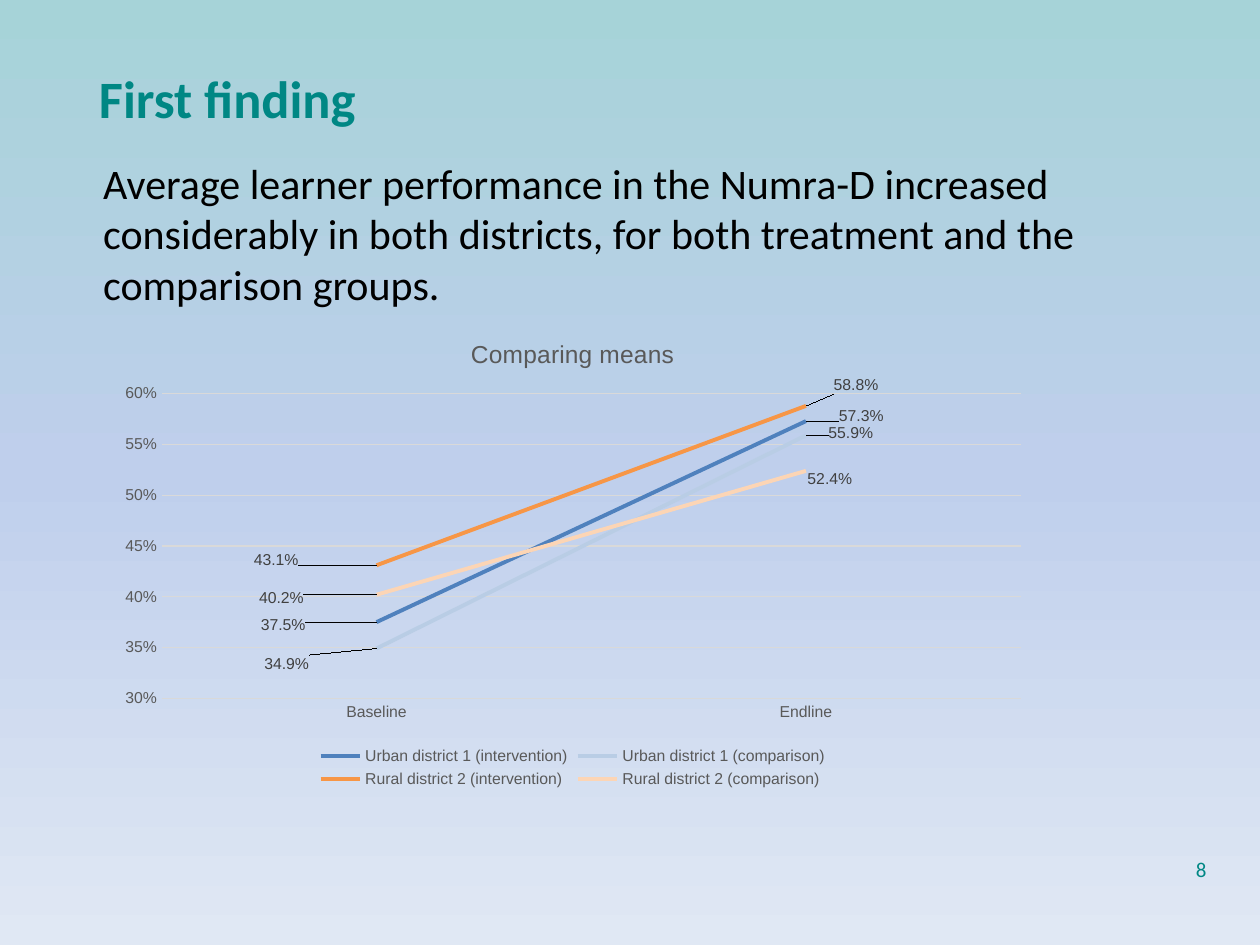
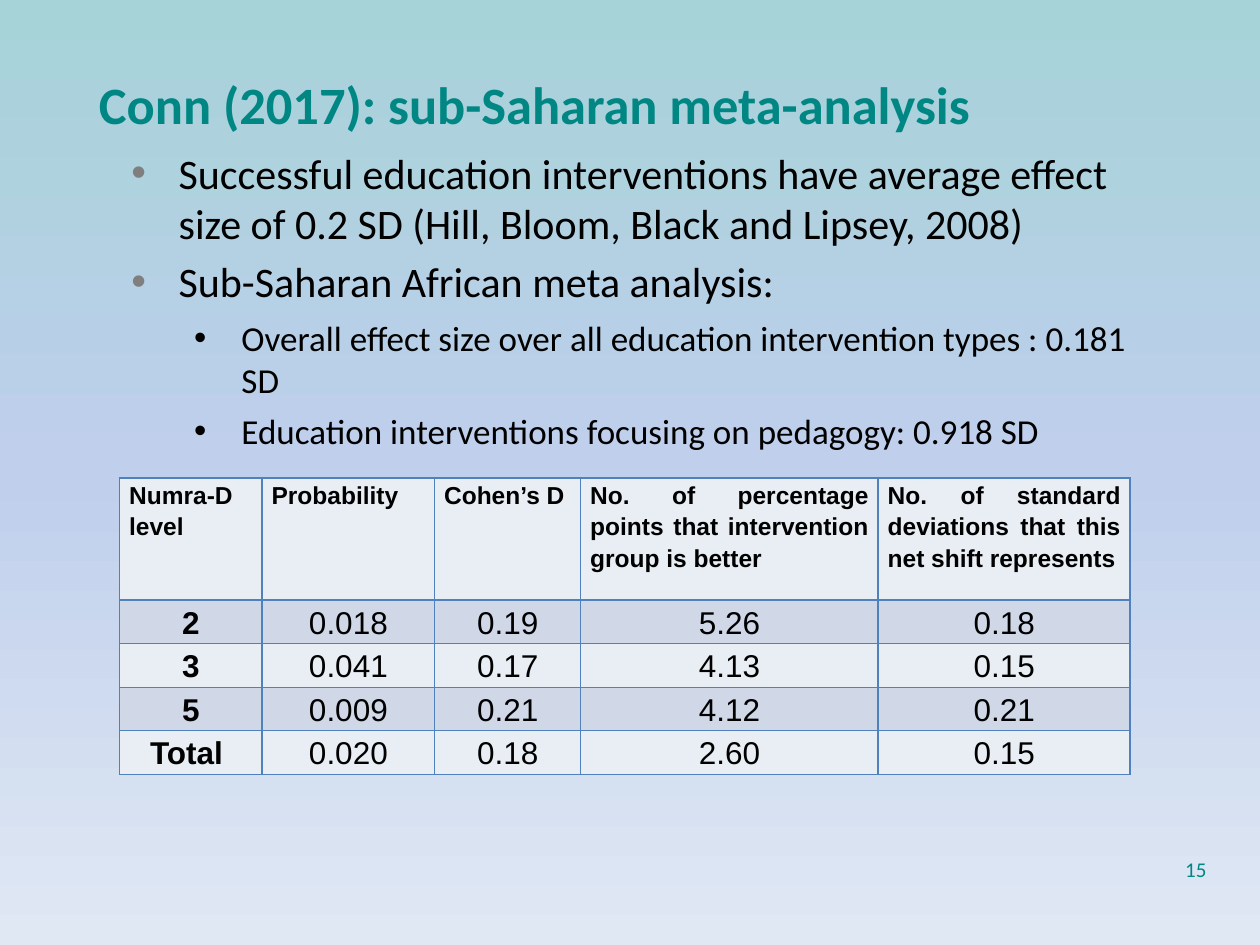
from dataclasses import dataclass

from pptx import Presentation
from pptx.chart.data import CategoryChartData
from pptx.dml.color import RGBColor
from pptx.enum.chart import XL_CHART_TYPE, XL_LABEL_POSITION, XL_LEGEND_POSITION, XL_TICK_MARK
from pptx.enum.text import MSO_ANCHOR, PP_ALIGN
from pptx.oxml import parse_xml
from pptx.oxml.ns import nsdecls, qn
from pptx.util import Pt

LEFT, CENTER, RIGHT, JUSTIFY = PP_ALIGN.LEFT, PP_ALIGN.CENTER, PP_ALIGN.RIGHT, PP_ALIGN.JUSTIFY
TOP, MIDDLE = MSO_ANCHOR.TOP, MSO_ANCHOR.MIDDLE
LINE = XL_CHART_TYPE.LINE
NO_TICKS = XL_TICK_MARK.NONE
LEGEND_BOTTOM = XL_LEGEND_POSITION.BOTTOM
LABEL_RIGHT = XL_LABEL_POSITION.RIGHT


@dataclass(frozen=True)
class Theme:
    # Fonts
    font: str = "Calibri"
    data_font: str = "Arial"
    # Colours
    background: tuple = ((0, "A6D3D8"), (50, "BFCFEC"), (100, "E0E8F4"))
    accent: str = "008784"
    text: str = "000000"
    bullet: str = "7F7F7F"
    axis: str = "595959"
    label: str = "404040"
    grid: str = "D9D9D9"
    border: str = "4F81BD"
    bands: tuple = ("E9EDF4", "D0D8E8")
    # Type sizes
    title: int = 30
    body: int = 24
    sub: int = 20
    cell: int = 18
    head: int = 14
    chart_title: int = 14
    number: int = 12
    chart: int = 9


T = Theme()
SLIDE_W, SLIDE_H = 720, 540

# Boxes: left, top, width, height
TITLE_BOX = (49.5, 34, 648, 44)
NUMBER_BOX = (528.5, 486, 168, 21.6)
FINDING_BOX = (37.5, 86.4, 626.5, 314.5)
CHART_BOX = (60.5, 181.5, 533.5, 272)
BULLETS_BOX = (50.4, 77, 613.5, 376.5)
TABLE_BOX = (68.4, 273, 577.5, 163)

# Name, colour, values, and label shift (right, down) for each point
CHART_SERIES = [
    ("Urban district 1 (intervention)", "4F81BD", (0.375, 0.573), ((-69, 2), (16, -3))),
    ("Urban district 1 (comparison)", "B9CDE5", (0.349, 0.559), ((-67, 9), (10, -1))),
    ("Rural district 2 (intervention)", "F79646", (0.431, 0.588), ((-73, -3), (13, -12))),
    ("Rural district 2 (comparison)", "FCD5B5", (0.402, 0.524), ((-70, 2), (-2, 5))),
]

SUB = dict(size=T.sub, indent=80.5, bullet=T.text, before=5.6)
BULLETS = [
    ("Successful education interventions have average effect size of 0.2 SD "
     "(Hill, Bloom, Black and Lipsey, 2008)", {}),
    ("Sub-Saharan African meta analysis:", {}),
    ("Overall effect size over all education intervention types : 0.181 SD", SUB),
    ("Education interventions focusing on pedagogy: 0.918 SD", SUB),
]

COLUMN_WIDTHS = (81.4, 98.6, 83.5, 170, 144)
ROW_HEIGHTS = (70, 23.2, 23.2, 23.2, 23.2)
EFFECTS = [
    ("Numra-D level", "Probability", "Cohen’s D",
     "No. of percentage points that intervention group is better",
     "No. of standard deviations that this net shift represents"),
    ("2", "0.018", "0.19", "5.26", "0.18"),
    ("3", "0.041", "0.17", "4.13", "0.15"),
    ("5", "0.009", "0.21", "4.12", "0.21"),
    ("Total ", "0.020", "0.18", "2.60", "0.15"),
]


def rgb(color):
    return RGBColor.from_string(color)


def set_font(font, size, color, name=T.font, bold=False):
    font.size, font.name, font.bold = Pt(size), name, bold
    font.color.rgb = rgb(color)


def add_paragraph(tf, text, *, first=True, size=T.body, color=T.text, font=T.font, bold=False,
                  align=LEFT, indent=0, bullet=None, before=0, after=0, spacing=None):
    """Write one paragraph; bullet is the colour of its bullet."""
    p = tf.paragraphs[0] if first else tf.add_paragraph()
    p.alignment = align
    p.space_before, p.space_after = Pt(0 if first else before), Pt(after)
    if spacing:
        p.line_spacing = spacing
    pPr = p._p.get_or_add_pPr()
    pPr.set("marL", str(Pt(indent)))
    pPr.set("indent", str(Pt(-27 if bullet else 0)))
    if bullet:
        for xml in (f'<a:buClr {nsdecls("a")}><a:srgbClr val="{bullet}"/></a:buClr>',
                    f'<a:buFont {nsdecls("a")} typeface="Arial"/>',
                    f'<a:buChar {nsdecls("a")} char="•"/>'):
            pPr.append(parse_xml(xml))
    r = p.add_run()
    r.text = text
    set_font(r.font, size, color, font, bold)


def add_text(s, box, paragraphs, *, inset=3.6, anchor=TOP, **fmt):
    """Add a text box of (text, format) paragraphs that share fmt."""
    tf = s.shapes.add_textbox(*map(Pt, box)).text_frame
    tf.word_wrap, tf.vertical_anchor = True, anchor
    tf.margin_left = tf.margin_right = Pt(7.2)
    tf.margin_top = tf.margin_bottom = Pt(inset)
    for i, (text, own) in enumerate(paragraphs):
        add_paragraph(tf, text, first=i == 0, **{**fmt, **own})


def set_background(master):
    """Give every slide the vertical three-colour gradient."""
    fill = master.background.fill
    fill.gradient()
    fill.gradient_angle = 270
    stops = master.element.find(".//" + qn("a:gsLst"))
    for stop in list(stops):
        stops.remove(stop)
    for percent, color in T.background:
        stops.append(parse_xml(f'<a:gs {nsdecls("a")} pos="{percent * 1000}">'
                               f'<a:srgbClr val="{color}"/></a:gs>'))


def add_base(prs, title, number, inset=3.6):
    """Add a slide with its title and number."""
    s = prs.slides.add_slide(prs.slide_layouts[6])
    add_text(s, TITLE_BOX, [(title, {})], inset=inset, size=T.title, color=T.accent, bold=True)
    add_text(s, NUMBER_BOX, [(str(number), {})], anchor=MIDDLE, size=T.number,
             color=T.accent, align=RIGHT)
    return s


def manual_layout(**values):
    parts = "".join(f'<c:{key} val="{value}"/>' for key, value in values.items())
    return parse_xml(f'<c:layout {nsdecls("c")}><c:manualLayout>{parts}'
                     '</c:manualLayout></c:layout>')


def format_axes(chart):
    for axis in (chart.category_axis, chart.value_axis):
        axis.major_tick_mark = axis.minor_tick_mark = NO_TICKS
        set_font(axis.tick_labels.font, T.chart, T.axis, T.data_font)
    values = chart.value_axis
    values.minimum_scale, values.maximum_scale, values.major_unit = 0.3, 0.6, 0.05
    values.tick_labels.number_format = "0%"
    values.tick_labels.number_format_is_linked = False
    values.format.line.fill.background()
    values.has_major_gridlines = True
    for line in (chart.category_axis.format.line, values.major_gridlines.format.line):
        line.color.rgb, line.width = rgb(T.grid), Pt(0.75)


def format_series(series, color, shifts, width, height):
    """Colour one line and move its point labels by the shifts."""
    series.smooth = False
    series.format.line.color.rgb, series.format.line.width = rgb(color), Pt(2.25)
    for i, (right, down) in enumerate(shifts):
        label = series.points[i].data_label
        label.position = LABEL_RIGHT
        set_font(label.font, T.chart, T.label, T.data_font)
    labels = series.data_labels
    labels.show_value = True
    labels.number_format, labels.number_format_is_linked = "0.0%", False
    set_font(labels.font, T.chart, T.label, T.data_font)
    for dLbl, (right, down) in zip(series._element.iter(qn("c:dLbl")), shifts):
        dLbl.insert(1, manual_layout(x=right / width, y=down / height))
        dLbl.insert(2, parse_xml(f'<c:numFmt {nsdecls("c")} formatCode="0.0%" sourceLinked="0"/>'))


def add_means_chart(s, box):
    data = CategoryChartData(number_format="0.0%")
    data.categories = ["Baseline", "Endline"]
    for name, _, values, _ in CHART_SERIES:
        data.add_series(name, values)
    chart = s.shapes.add_chart(LINE, *map(Pt, box), data).chart
    set_font(chart.font, T.chart, T.text, T.data_font)

    # Title and legend
    chart.has_title = True
    tf = chart.chart_title.text_frame
    add_paragraph(tf, "Comparing means", size=T.chart_title, color=T.axis,
                  font=T.data_font, align=CENTER)
    chart.has_legend = True
    chart.legend.position, chart.legend.include_in_layout = LEGEND_BOTTOM, False
    set_font(chart.legend.font, T.chart, T.axis, T.data_font)

    # Axes, lines and labels
    format_axes(chart)
    chart.plots[0].vary_by_categories = False
    for series, (_, color, _, shifts) in zip(chart.plots[0].series, CHART_SERIES):
        format_series(series, color, shifts, *box[2:])

    # Plot area
    area = chart.element.find(".//" + qn("c:plotArea"))
    for old in area.findall(qn("c:layout")):
        area.remove(old)
    area.insert(0, manual_layout(layoutTarget="inner", xMode="edge", yMode="edge",
                                 x=0.06, y=0.16, w=0.92, h=0.64))


def add_borders(cell):
    tcPr = cell._tc.get_or_add_tcPr()
    for i, side in enumerate(("lnL", "lnR", "lnT", "lnB")):
        tcPr.insert(i, parse_xml(
            f'<a:{side} {nsdecls("a")} w="{Pt(1)}"><a:solidFill><a:srgbClr val="{T.border}"/>'
            f'</a:solidFill></a:{side}>'))


def add_effects_table(s, box):
    table = s.shapes.add_table(len(EFFECTS), len(COLUMN_WIDTHS), *map(Pt, box)).table
    table.first_row = table.horz_banding = False
    for column, width in zip(table.columns, COLUMN_WIDTHS):
        column.width = Pt(width)
    for i, (row, height) in enumerate(zip(table.rows, ROW_HEIGHTS)):
        row.height = Pt(height)
        for j, cell in enumerate(row.cells):
            cell.margin_left = cell.margin_right = Pt(5.4)
            cell.margin_top = cell.margin_bottom = 0
            cell.fill.solid()
            cell.fill.fore_color.rgb = rgb(T.bands[i % 2])
            add_borders(cell)
            add_paragraph(cell.text_frame, EFFECTS[i][j], font=T.data_font,
                          size=T.cell if i else T.head, bold=i == 0 or j == 0,
                          align=CENTER if i else JUSTIFY, spacing=1.15, after=10)


def build_finding(prs):
    s = add_base(prs, "First finding", 8)
    finding = ("Average learner performance in the Numra-D increased considerably in both "
               "districts, for both treatment and the comparison groups.")
    add_text(s, FINDING_BOX, [(finding, {})], indent=14.4)
    add_means_chart(s, CHART_BOX)


def build_meta_analysis(prs):
    s = add_base(prs, "Conn (2017): sub-Saharan meta-analysis", 15, inset=7.2)
    add_text(s, BULLETS_BOX, BULLETS, inset=7.2, indent=44.6, bullet=T.bullet, before=4.4)
    add_effects_table(s, TABLE_BOX)


def main():
    prs = Presentation()
    prs.slide_width, prs.slide_height = Pt(SLIDE_W), Pt(SLIDE_H)
    set_background(prs.slide_masters[0])
    build_finding(prs)
    build_meta_analysis(prs)
    prs.save("out.pptx")


if __name__ == "__main__":
    main()
